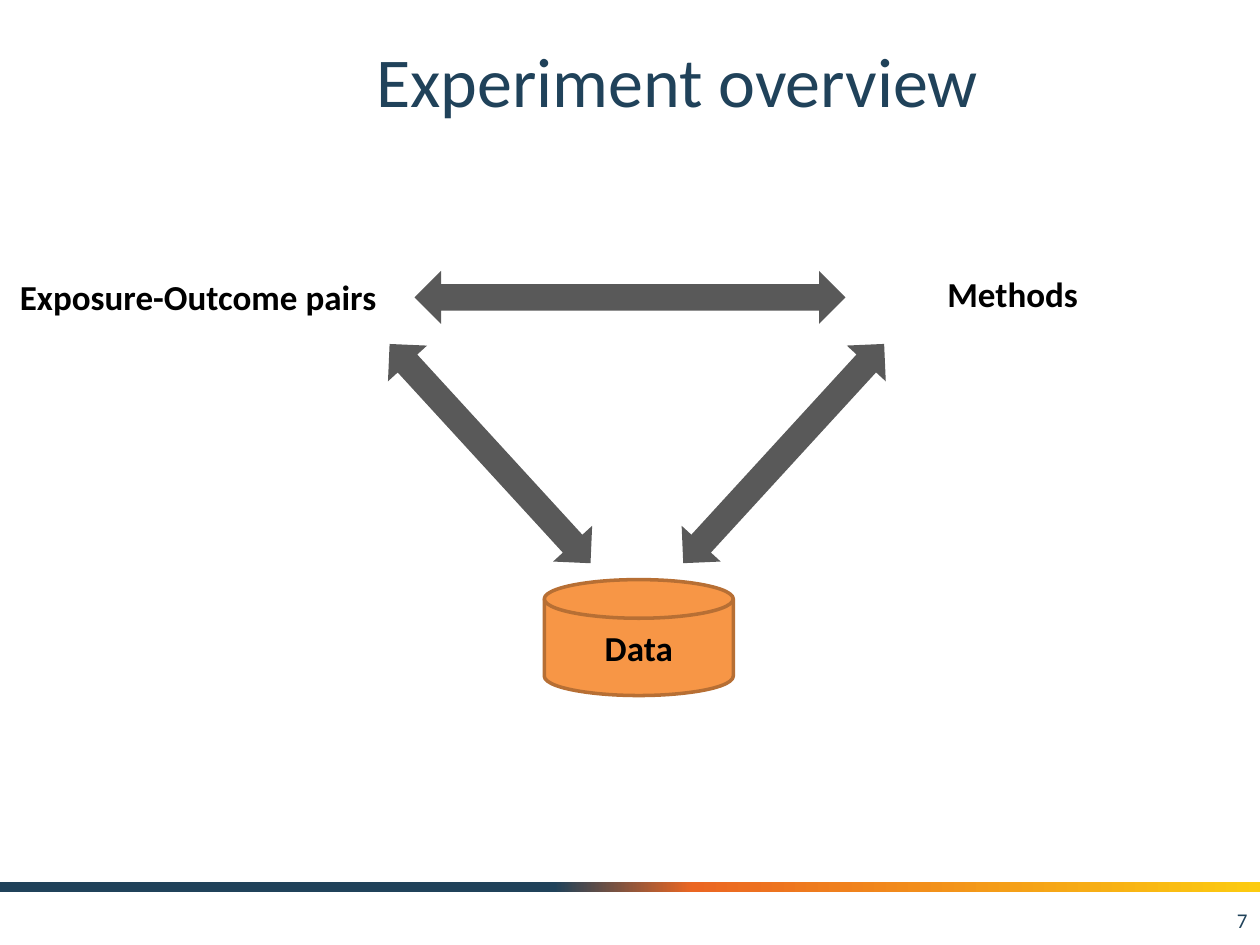
from copy import deepcopy
from dataclasses import dataclass
from typing import NamedTuple

from pptx import Presentation
from pptx.dml.color import RGBColor
from pptx.enum.shapes import MSO_SHAPE as Preset
from pptx.enum.text import MSO_ANCHOR as Anchor, PP_ALIGN as Align
from pptx.util import Inches, Pt

WIDTH, HEIGHT = Inches(10), Inches(7.5)
COLS, ROWS = 100, 75
TITLE_ONLY = 5


@dataclass(frozen=True)
class Theme:
    font: str = "Calibri"
    navy: str = "20425A"
    black: str = "000000"
    arrow: str = "595959"
    disk: str = "F79646"
    disk_edge: str = "B76F34"
    band: tuple = ((0.44, "20425A"), (0.55, "EB6622"), (1, "FCCB10"))
    title_size: int = 40
    label_size: int = 20
    number_size: int = 12


class Box(NamedTuple):
    """A place on the grid, in columns and rows."""
    col: float
    row: float
    cols: float
    rows: float

    def emu(self) -> tuple:
        x, y = WIDTH / COLS, HEIGHT / ROWS
        return (int(self.col * x), int(self.row * y),
                int(self.cols * x), int(self.rows * y))


class Label(NamedTuple):
    text: str
    box: Box


class Arrow(NamedTuple):
    """A double arrow: centre and length on the grid, rotation in degrees."""
    col: float
    row: float
    length: float
    rotation: float


THEME = Theme()
ARROW_WIDTH = 4.2
LABELS = (
    Label("Methods", Box(74.2, 21.1, 12.5, 4.4)),
    Label("Exposure-Outcome pairs", Box(0.6, 21.4, 30.6, 4.4)),
)
ARROWS = (
    Arrow(62.2, 36, 23.6, 42.5),
    Arrow(38.9, 36, 23.6, 317.5),
    Arrow(50, 23.6, 34.2, 270),
)


def rgb(value: str) -> RGBColor:
    return RGBColor.from_string(value)


def write(sp, text: str, *, size: int, color: str = THEME.black, bold: bool = False,
          align=Align.LEFT, anchor=Anchor.TOP, wrap: bool = True) -> None:
    tf = sp.text_frame
    tf.word_wrap = wrap
    tf.vertical_anchor = anchor
    p = tf.paragraphs[0]
    p.alignment = align
    r = p.add_run()
    r.text = text
    r.font.name, r.font.size, r.font.bold = THEME.font, Pt(size), bold
    r.font.color.rgb = rgb(color)


def add_preset(slide, preset, box: Box, fill: str = ""):
    """Add a shape with no shadow or line, and a solid fill if one is named."""
    sp = slide.shapes.add_shape(preset, *box.emu())
    sp.shadow.inherit = False
    sp.line.fill.background()
    if fill:
        sp.fill.solid()
        sp.fill.fore_color.rgb = rgb(fill)
    return sp


def add_band(slide) -> None:
    sp = add_preset(slide, Preset.RECTANGLE, Box(0, 70, COLS, 0.8))
    sp.fill.gradient()
    sp.fill.gradient_angle = 0
    stops = sp.fill._fill._gradFill.gsLst
    stops.append(deepcopy(stops[-1]))
    for stop, (position, color) in zip(sp.fill.gradient_stops, THEME.band):
        stop.position = position
        stop.color.rgb = rgb(color)


def add_title(slide, text: str) -> None:
    sp = slide.shapes.title
    sp.left, sp.top, sp.width, sp.height = Box(12.5, 1.7, 82.5, 9.2).emu()
    write(sp, text, size=THEME.title_size, color=THEME.navy,
          align=Align.CENTER, anchor=Anchor.MIDDLE)


def add_number(slide, text: str) -> None:
    sp = slide.shapes.add_textbox(*Box(76.7, 71, 23.3, 4).emu())
    write(sp, text, size=THEME.number_size, color=THEME.navy,
          align=Align.RIGHT, anchor=Anchor.MIDDLE)


def add_disk(slide, text: str) -> None:
    sp = add_preset(slide, Preset.FLOWCHART_MAGNETIC_DISK,
                    Box(43.2, 46, 15, 9.2), THEME.disk)
    sp.line.color.rgb = rgb(THEME.disk_edge)
    sp.line.width = Pt(2)
    write(sp, text, size=THEME.label_size, bold=True,
          align=Align.CENTER, anchor=Anchor.MIDDLE)


def add_label(slide, label: Label) -> None:
    sp = slide.shapes.add_textbox(*label.box.emu())
    write(sp, label.text, size=THEME.label_size, bold=True, wrap=False)


def add_arrow(slide, arrow: Arrow) -> None:
    box = Box(arrow.col - ARROW_WIDTH / 2, arrow.row - arrow.length / 2,
              ARROW_WIDTH, arrow.length)
    sp = add_preset(slide, Preset.UP_DOWN_ARROW, box, THEME.arrow)
    sp.rotation = arrow.rotation


def main() -> None:
    prs = Presentation()
    prs.slide_width, prs.slide_height = WIDTH, HEIGHT
    slide = prs.slides.add_slide(prs.slide_layouts[TITLE_ONLY])
    add_band(slide)
    add_title(slide, "Experiment overview")
    add_number(slide, "7")
    add_disk(slide, "Data")
    for label in LABELS:
        add_label(slide, label)
    for arrow in ARROWS:
        add_arrow(slide, arrow)
    prs.save("out.pptx")


if __name__ == "__main__":
    main()
